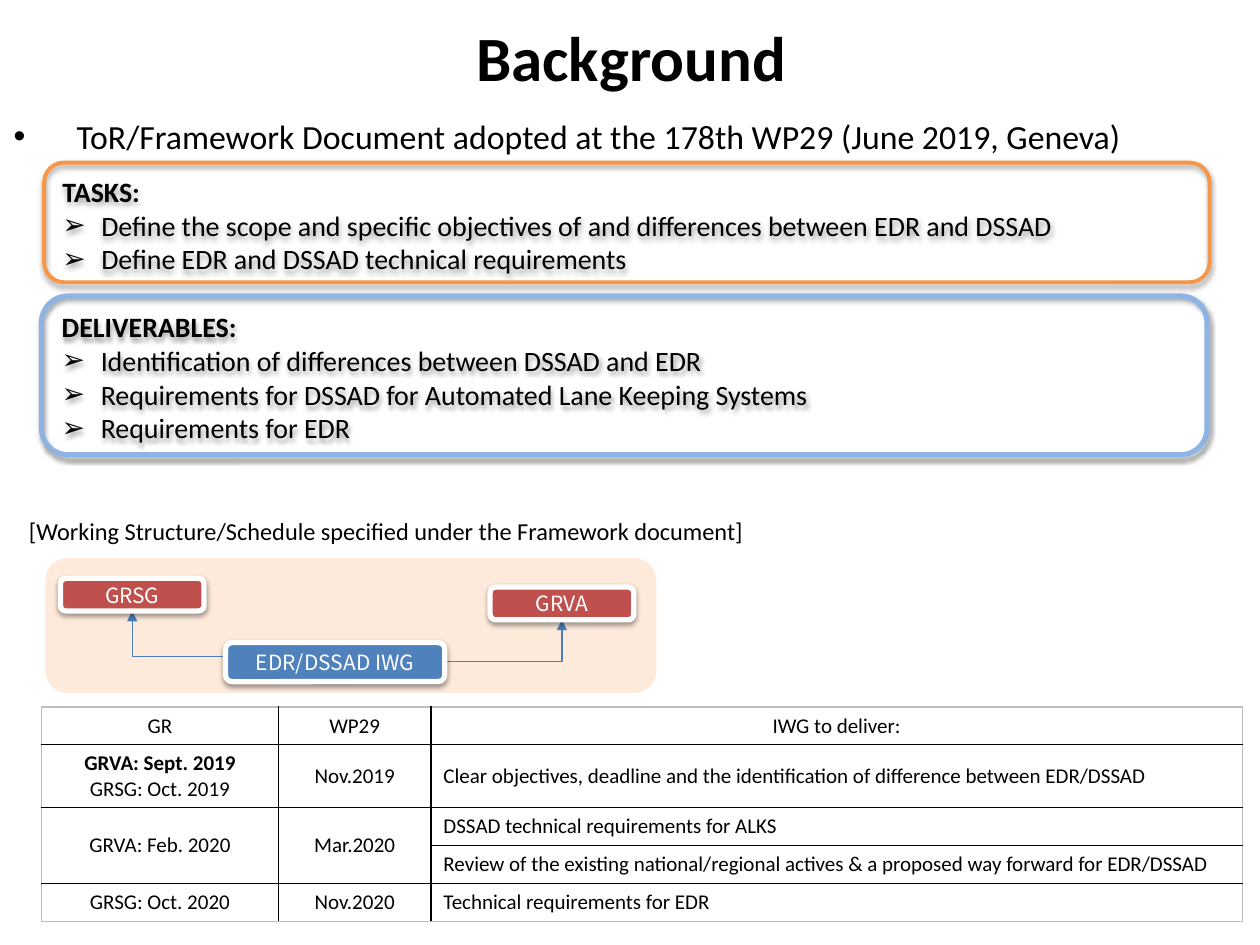
from dataclasses import dataclass

from lxml import etree
from pptx import Presentation
from pptx.dml.color import RGBColor
from pptx.enum.shapes import MSO_CONNECTOR, MSO_SHAPE
from pptx.enum.text import MSO_ANCHOR, PP_ALIGN
from pptx.oxml.ns import qn
from pptx.util import Inches, Pt

ROUND = MSO_SHAPE.ROUNDED_RECTANGLE
ELBOW = MSO_CONNECTOR.ELBOW
LEFT, CENTER = PP_ALIGN.LEFT, PP_ALIGN.CENTER
TOP, MIDDLE = MSO_ANCHOR.TOP, MSO_ANCHOR.MIDDLE

COLORS = {
    "black": "000000", "white": "FFFFFF", "orange": "F79646", "sky": "8EB4E3",
    "peach": "FDEADA", "red": "C0504D", "blue": "4F81BD", "link": "4B7EBC",
    "grey": "BFBFBF",
}


@dataclass
class Line:
    text: str
    bold: bool = False
    bullet: str = ""
    indent: float = 0.31


@dataclass
class Box:
    x: float
    y: float
    w: float
    h: float
    fill: str = ""
    line: str = ""
    weight: float = 3
    shadow: bool = True


@dataclass
class Cell:
    row: int
    col: int
    lines: list[Line]
    rows: int = 1


def rgb(name: str) -> RGBColor:
    return RGBColor.from_string(COLORS[name])


def sub(parent, tag: str, **attrs):
    return etree.SubElement(parent, qn(tag), attrs)


def write(tf, lines: list[Line], *, size: float, color: str = "black", font: str = "Calibri",
          align=LEFT, anchor=TOP) -> None:
    tf.word_wrap = True
    tf.vertical_anchor = anchor
    for i, line in enumerate(lines):
        p = tf.paragraphs[0] if i == 0 else tf.add_paragraph()
        p.alignment = align
        if line.bullet:
            pPr = p._p.get_or_add_pPr()
            pPr.set("marL", str(Inches(line.indent)))
            pPr.set("indent", str(-Inches(line.indent)))
            sub(pPr, "a:buFont", typeface="Arial")
            sub(pPr, "a:buChar", char=line.bullet)
        r = p.add_run()
        r.text = line.text
        r.font.name, r.font.size, r.font.bold = font, Pt(size), line.bold
        r.font.color.rgb = rgb(color)


def add_text(s, x: float, y: float, w: float, h: float, line: Line, **fmt):
    tf = s.shapes.add_textbox(Inches(x), Inches(y), Inches(w), Inches(h)).text_frame
    write(tf, [line], **fmt)
    return tf


def add_box(s, b: Box):
    sp = s.shapes.add_shape(ROUND, Inches(b.x), Inches(b.y), Inches(b.w), Inches(b.h))
    if b.fill:
        sp.fill.solid()
        sp.fill.fore_color.rgb = rgb(b.fill)
    else:
        sp.fill.background()
    if b.line:
        sp.line.color.rgb = rgb(b.line)
        sp.line.width = Pt(b.weight)
    else:
        sp.line.fill.background()
    sp.shadow.inherit = False
    if b.shadow:
        effects = sp._element.spPr.find(qn("a:effectLst"))
        shadow = sub(effects, "a:outerShdw", blurRad=str(Pt(3.1)), dist=str(Pt(1.6)),
                     dir="5400000", rotWithShape="0")
        sub(sub(shadow, "a:srgbClr", val=COLORS["black"]), "a:alpha", val="38000")
    return sp


def add_arrow(s, x1: float, y1: float, x2: float, y2: float) -> None:
    c = s.shapes.add_connector(ELBOW, Inches(x1), Inches(y1), Inches(x2), Inches(y2))
    c.line.color.rgb = rgb("link")
    c.line.width = Pt(0.75)
    spPr = c._element.spPr
    spPr.find(qn("a:prstGeom")).set("prst", "bentConnector2")  # a single corner
    sub(spPr.find(qn("a:ln")), "a:tailEnd", type="triangle")
    sub(spPr, "a:effectLst")


def style_cell(cell, outer: dict[str, bool]) -> None:
    tcPr = cell._tc.get_or_add_tcPr()
    for side, is_outer in outer.items():
        ln = sub(tcPr, f"a:ln{side}", w=str(Pt(1)))
        color = COLORS["grey" if is_outer else "black"]
        sub(sub(ln, "a:solidFill"), "a:srgbClr", val=color)
    cell.fill.background()


def add_schedule(s, x: float, y: float, widths: list[float], heights: list[float],
                 cells: list[Cell]) -> None:
    n, m = len(heights), len(widths)
    frame = s.shapes.add_table(n, m, Inches(x), Inches(y), Inches(sum(widths)),
                               Inches(sum(heights)))
    table = frame.table
    table.first_row = table.horz_banding = False
    for col, w in zip(table.columns, widths):
        col.width = Inches(w)
    for row, h in zip(table.rows, heights):
        row.height = Inches(h)
    for i in range(n):
        for j in range(m):
            style_cell(table.cell(i, j), {"L": j == 0, "R": j == m - 1,
                                          "T": i == 0, "B": i == n - 1})
    for c in cells:
        cell = table.cell(c.row, c.col)
        if c.rows > 1:
            cell.merge(table.cell(c.row + c.rows - 1, c.col))
        cell.vertical_anchor = MIDDLE
        centered = c.row == 0 or c.col < m - 1
        tf = cell.text_frame
        write(tf, c.lines, size=12, align=CENTER if centered else LEFT, anchor=None)


PANELS = [
    (Box(0.35, 1.29, 9.25, 0.95, line="orange", weight=2.25), "TASKS:", [
        "Define the scope and specific objectives of and differences between EDR and DSSAD",
        "Define EDR and DSSAD technical requirements"]),
    (Box(0.33, 2.35, 9.25, 1.26, line="sky"), "DELIVERABLES:", [
        "Identification of differences between DSSAD and EDR",
        "Requirements for DSSAD for Automated Lane Keeping Systems",
        "Requirements for EDR"]),
]
GROUPS = [
    (Box(0.48, 4.59, 1.14, 0.26, "red", "white"), "GRSG"),
    (Box(3.89, 4.66, 1.14, 0.26, "red", "white"), "GRVA"),
    (Box(1.79, 5.1, 1.74, 0.31, "blue", "white"), "EDR/DSSAD IWG"),
]
SCHEDULE = [
    Cell(0, 0, [Line("GR")]),
    Cell(0, 1, [Line("WP29")]),
    Cell(0, 2, [Line("IWG to deliver:")]),
    Cell(1, 0, [Line("GRVA: Sept. 2019", bold=True), Line("GRSG: Oct. 2019")]),
    Cell(1, 1, [Line("Nov.2019")]),
    Cell(1, 2, [Line("Clear objectives, deadline and the identification of difference "
                     "between EDR/DSSAD")]),
    Cell(2, 0, [Line("GRVA: Feb. 2020")], rows=2),
    Cell(2, 1, [Line("Mar.2020")], rows=2),
    Cell(2, 2, [Line("DSSAD technical requirements for ALKS")]),
    Cell(3, 2, [Line("Review of the existing national/regional actives & a proposed way "
                     "forward for EDR/DSSAD")]),
    Cell(4, 0, [Line("GRSG: Oct. 2020")]),
    Cell(4, 1, [Line("Nov.2020")]),
    Cell(4, 2, [Line("Technical requirements for EDR")]),
]


def main() -> None:
    prs = Presentation()
    prs.slide_width, prs.slide_height = Inches(10), Inches(7.5)
    s = prs.slides.add_slide(prs.slide_layouts[6])

    # Title and lead bullet
    add_text(s, 0.01, 0.22, 10, 0.46, Line("Background", bold=True),
             size=36, align=CENTER, anchor=MIDDLE)
    lead = "ToR/Framework Document adopted at the 178th WP29 (June 2019, Geneva)"
    add_text(s, 0.01, 0.87, 9.25, 0.52, Line(lead, bullet="•", indent=0.5), size=19.3)

    # Tasks and deliverables
    for box, heading, items in PANELS:
        lines = [Line(heading, bold=True)] + [Line(t, bullet="➢") for t in items]
        write(add_box(s, box).text_frame, lines, size=16)

    # Schedule table
    add_schedule(s, 0.33, 5.61, [1.88, 1.21, 6.44], [0.3, 0.5, 0.3, 0.3, 0.3], SCHEDULE)

    # Working structure
    caption = "[Working Structure/Schedule specified under the Framework document]"
    tf = add_text(s, 0.05, 4.05, 6.51, 0.45, Line(caption), size=13.9)
    tf.margin_left = Inches(0.18)
    add_box(s, Box(0.36, 4.43, 4.85, 1.07, "peach", shadow=False))
    add_arrow(s, 2.69, 5.21, 1.05, 4.85)
    add_arrow(s, 3.53, 5.25, 4.46, 4.92)
    for box, name in GROUPS:
        tf = add_box(s, box).text_frame
        tf.margin_top = tf.margin_bottom = 0
        write(tf, [Line(name)], size=12, color="white", font="Noto Sans CJK JP",
              align=CENTER, anchor=MIDDLE)

    prs.save("out.pptx")


if __name__ == "__main__":
    main()
